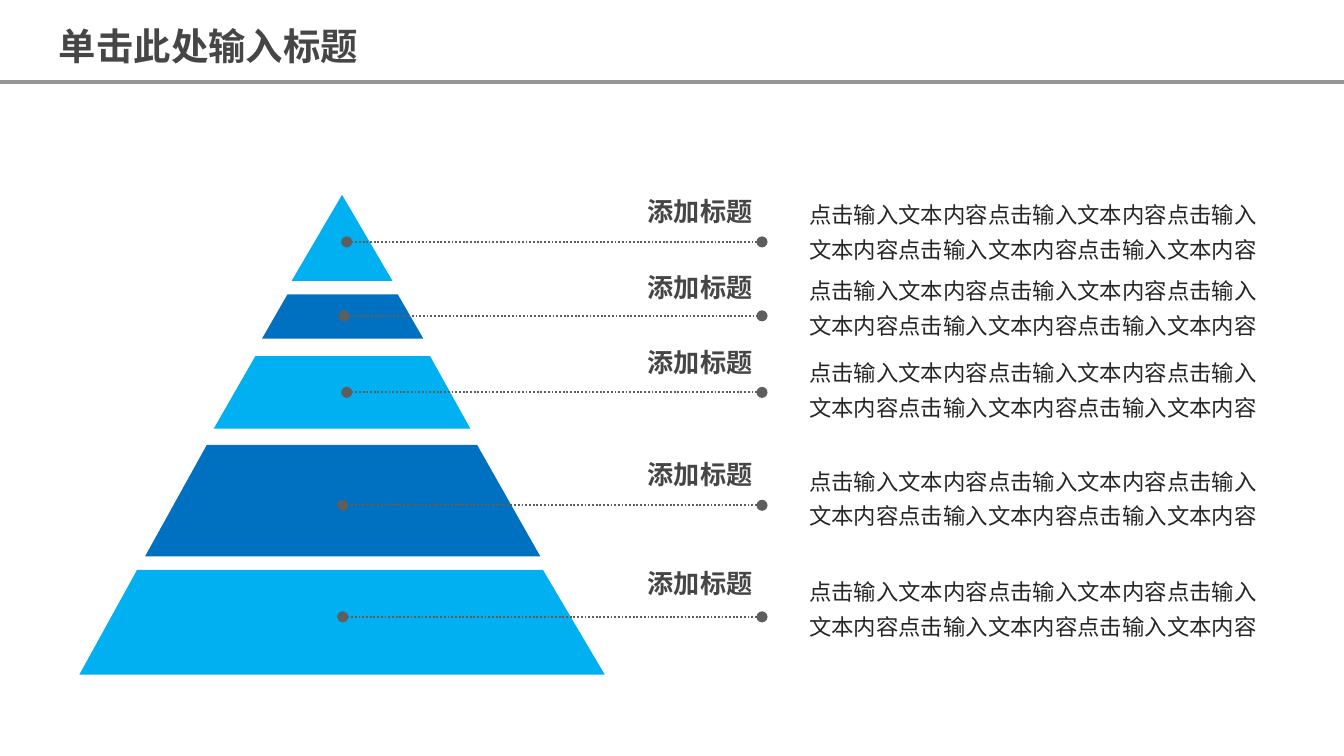
"""Build a five-level pyramid slide with a labelled callout for each level."""
from dataclasses import dataclass

from lxml import etree
from pptx import Presentation
from pptx import util as u
from pptx.dml.color import RGBColor
from pptx.enum import dml, shapes, text
from pptx.oxml import ns
from pptx.shapes.base import BaseShape
from pptx.slide import Slide

FONT = "Noto Sans CJK SC"
LIGHT_BLUE = RGBColor(0x00, 0xB0, 0xF0)
DARK_BLUE = RGBColor(0x00, 0x70, 0xC0)
RULE_GRAY = RGBColor(0x96, 0x96, 0x96)
LEADER_GRAY = RGBColor(0x5E, 0x5E, 0x5E)
HEADING_GRAY = RGBColor(0x46, 0x46, 0x46)
BODY_GRAY = RGBColor(0x26, 0x26, 0x26)
SLIDE_WIDTH = 10
LEADER_END = 5.67
BODY_TEXT = "点击输入文本内容" * 5


@dataclass(frozen=True)
class Tier:
    top: float
    bottom: float
    top_edge: tuple[float, float]
    bottom_edge: tuple[float, float]
    color: RGBColor


@dataclass(frozen=True)
class Callout:
    leader_start: float
    leader_y: float
    label_top: float
    body_top: float


@dataclass(frozen=True)
class TextStyle:
    size: float
    color: RGBColor
    bold: bool = False
    line_spacing: float = 1.0
    align: text.PP_ALIGN = text.PP_ALIGN.LEFT
    wrap: bool = True
    margins: tuple[float, float] = (0.08, 0.04)


TITLE = TextStyle(20, HEADING_GRAY, bold=True, line_spacing=1.2, margins=(0.1, 0.05))
LABEL = TextStyle(14, HEADING_GRAY, bold=True, align=text.PP_ALIGN.CENTER, wrap=False)
BODY = TextStyle(12, BODY_GRAY, line_spacing=1.3)

TIERS = [
    Tier(2.19, 2.52, (2.14, 2.96), (1.95, 3.15), DARK_BLUE),
    Tier(2.65, 3.19, (1.9, 3.2), (1.59, 3.5), LIGHT_BLUE),
    Tier(3.31, 4.14, (1.54, 3.55), (1.08, 4.02), DARK_BLUE),
    Tier(4.24, 5.02, (1.02, 4.04), (0.59, 4.5), LIGHT_BLUE),
]
CALLOUTS = [
    Callout(2.58, 1.8, 1.41, 1.4),
    Callout(2.56, 2.35, 1.98, 1.96),
    Callout(2.58, 2.92, 2.54, 2.57),
    Callout(2.55, 3.76, 3.37, 3.38),
    Callout(2.55, 4.59, 4.18, 4.2),
]


def paint(shape: BaseShape, color: RGBColor) -> None:
    shape.shadow.inherit = False
    shape.fill.solid()
    shape.fill.fore_color.rgb = color
    shape.line.fill.background()


def add_peak(slide: Slide) -> None:
    box = [u.Inches(value) for value in (2.17, 1.45, 0.75, 0.64)]
    paint(slide.shapes.add_shape(shapes.MSO_SHAPE.ISOSCELES_TRIANGLE, *box), LIGHT_BLUE)


def add_tier(slide: Slide, tier: Tier) -> None:
    corners = [
        (tier.top_edge[0], tier.top),
        (tier.top_edge[1], tier.top),
        (tier.bottom_edge[1], tier.bottom),
        (tier.bottom_edge[0], tier.bottom),
    ]
    start, *others = [(u.Inches(x), u.Inches(y)) for x, y in corners]
    builder = slide.shapes.build_freeform(*start)
    builder.add_line_segments(others, close=True)
    paint(builder.convert_to_shape(), tier.color)


def add_line(slide: Slide, left: float, right: float, y: float,
             color: RGBColor, width: float, dotted: bool = False) -> None:
    line = slide.shapes.add_connector(
        shapes.MSO_CONNECTOR.STRAIGHT,
        u.Inches(left), u.Inches(y), u.Inches(right), u.Inches(y))
    line.line.color.rgb = color
    line.line.width = u.Pt(width)
    properties = line._element.spPr
    if dotted:
        line.line.dash_style = dml.MSO_LINE.ROUND_DOT
        outline = properties.find(ns.qn("a:ln"))
        for end in ("a:headEnd", "a:tailEnd"):
            etree.SubElement(outline, ns.qn(end), type="oval")
    etree.SubElement(properties, ns.qn("a:effectLst"))


def add_text(slide: Slide, content: str, left: float, top: float,
             width: float, height: float, style: TextStyle) -> None:
    box = slide.shapes.add_textbox(
        u.Inches(left), u.Inches(top), u.Inches(width), u.Inches(height))
    frame = box.text_frame
    frame.word_wrap = style.wrap
    frame.auto_size = text.MSO_AUTO_SIZE.SHAPE_TO_FIT_TEXT
    horizontal, vertical = (u.Inches(margin) for margin in style.margins)
    frame.margin_left = frame.margin_right = horizontal
    frame.margin_top = frame.margin_bottom = vertical
    paragraph = frame.paragraphs[0]
    paragraph.text = content
    paragraph.alignment = style.align
    paragraph.line_spacing = style.line_spacing
    font = paragraph.font
    font.name = FONT
    font.size = u.Pt(style.size)
    font.bold = style.bold
    font.color.rgb = style.color
    defaults = paragraph._p.pPr.find(ns.qn("a:defRPr"))
    etree.SubElement(defaults, ns.qn("a:ea"), typeface=FONT)


def add_callout(slide: Slide, callout: Callout) -> None:
    add_line(slide, callout.leader_start, LEADER_END, callout.leader_y,
             LEADER_GRAY, 1, dotted=True)
    add_text(slide, BODY_TEXT, 5.94, callout.body_top, 3.62, 0.6, BODY)
    add_text(slide, "添加标题", 4.73, callout.label_top, 0.96, 0.32, LABEL)


def main() -> None:
    presentation = Presentation()
    presentation.slide_width = u.Inches(SLIDE_WIDTH)
    presentation.slide_height = u.Inches(SLIDE_WIDTH * 9 / 16)
    slide = presentation.slides.add_slide(presentation.slide_layouts[6])
    add_line(slide, 0, SLIDE_WIDTH, 0.61, RULE_GRAY, 1.75)
    add_peak(slide)
    for tier in TIERS:
        add_tier(slide, tier)
    for callout in CALLOUTS:
        add_callout(slide, callout)
    add_text(slide, "单击此处输入标题", 0.34, 0.06, 2.61, 0.5, TITLE)
    presentation.save("out.pptx")


if __name__ == "__main__":
    main()
